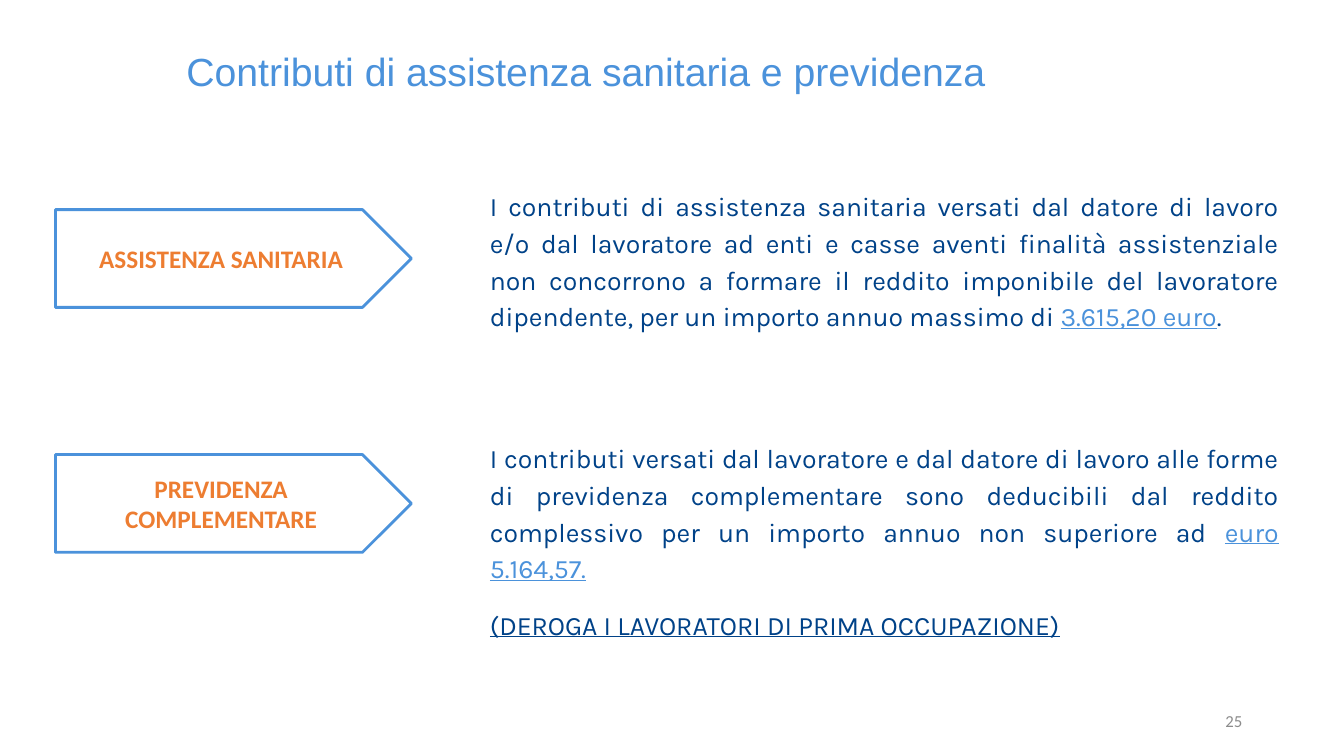
"""Build the slide on health care and pension contributions."""
import pptx
import pptx.dml.color
import pptx.enum.shapes
import pptx.enum.text
import pptx.util

Inches = pptx.util.Inches
Pt = pptx.util.Pt
RGBColor = pptx.dml.color.RGBColor
ALIGN = pptx.enum.text.PP_ALIGN
ANCHOR = pptx.enum.text.MSO_ANCHOR

BLUE = RGBColor(0x4B, 0x92, 0xDB)
NAVY = RGBColor(0x00, 0x42, 0x88)
ORANGE = RGBColor(0xED, 0x7D, 0x31)
GRAY = RGBColor(0x8C, 0x8C, 0x8C)
WHITE = RGBColor(0xFF, 0xFF, 0xFF)


def style(r, font, size, color, bold=False, underline=False):
    r.font.name = font
    r.font.size = Pt(size)
    r.font.color.rgb = color
    r.font.bold = bold
    r.font.underline = underline


prs = pptx.Presentation()
prs.slide_width = Inches(13.33)
prs.slide_height = Inches(7.5)
slide = prs.slides.add_slide(prs.slide_layouts[6])

tb = slide.shapes.add_textbox(Inches(9.42), Inches(6.95), Inches(3), Inches(0.4))
tf = tb.text_frame
tf.text = "25"
tf.vertical_anchor = ANCHOR.MIDDLE
p = tf.paragraphs[0]
p.alignment = ALIGN.RIGHT
style(p.runs[0], "Calibri", 12, GRAY)

tb = slide.shapes.add_textbox(Inches(1.75), Inches(0.42), Inches(8.23), Inches(0.57))
tf = tb.text_frame
tf.text = "Contributi di assistenza sanitaria e previdenza"
style(tf.paragraphs[0].runs[0], "Arial", 28, BLUE)

topics = [
    ("ASSISTENZA SANITARIA", 2.08, 1.79, 1.55, [
        [("I contributi di assistenza sanitaria versati dal datore di lavoro e/o dal "
          "lavoratore ad enti e casse aventi finalità assistenziale non concorrono a "
          "formare il reddito imponibile del lavoratore dipendente, per un importo "
          "annuo massimo di ", NAVY, False),
         ("3.615,20 euro", BLUE, True),
         (".", NAVY, False)],
    ]),
    ("PREVIDENZA COMPLEMENTARE", 4.51, 4.29, 1.74, [
        [("I contributi versati dal lavoratore e dal datore di lavoro alle forme di "
          "previdenza complementare sono deducibili dal reddito complessivo per un "
          "importo annuo non superiore ad ", NAVY, False),
         ("euro 5.164,57.", BLUE, True)],
        [("(DEROGA I LAVORATORI DI PRIMA OCCUPAZIONE)", NAVY, True)],
    ]),
]

for label, arrow_top, text_top, text_height, paragraphs in topics:
    tb = slide.shapes.add_textbox(Inches(4.76), Inches(text_top), Inches(8.02), Inches(text_height))
    tf = tb.text_frame
    tf.word_wrap = True
    for i, runs in enumerate(paragraphs):
        p = tf.add_paragraph() if i else tf.paragraphs[0]
        p.alignment = ALIGN.JUSTIFY
        p.line_spacing = 1.15
        p.space_before = Pt(14 if i else 0)
        for text, color, underline in runs:
            r = p.add_run()
            r.text = text
            style(r, "Karla", 19, color, underline=underline)

    sp = slide.shapes.add_shape(pptx.enum.shapes.MSO_SHAPE.PENTAGON, Inches(0.55),
                                Inches(arrow_top), Inches(3.53), Inches(0.97))
    sp.shadow.inherit = False
    sp.fill.solid()
    sp.fill.fore_color.rgb = WHITE
    sp.line.color.rgb = BLUE
    sp.line.width = Pt(2)
    tf = sp.text_frame
    tf.text = label
    tf.word_wrap = True
    tf.vertical_anchor = ANCHOR.MIDDLE
    p = tf.paragraphs[0]
    p.alignment = ALIGN.CENTER
    style(p.runs[0], "Calibri", 18, ORANGE, bold=True)

prs.save("out.pptx")
